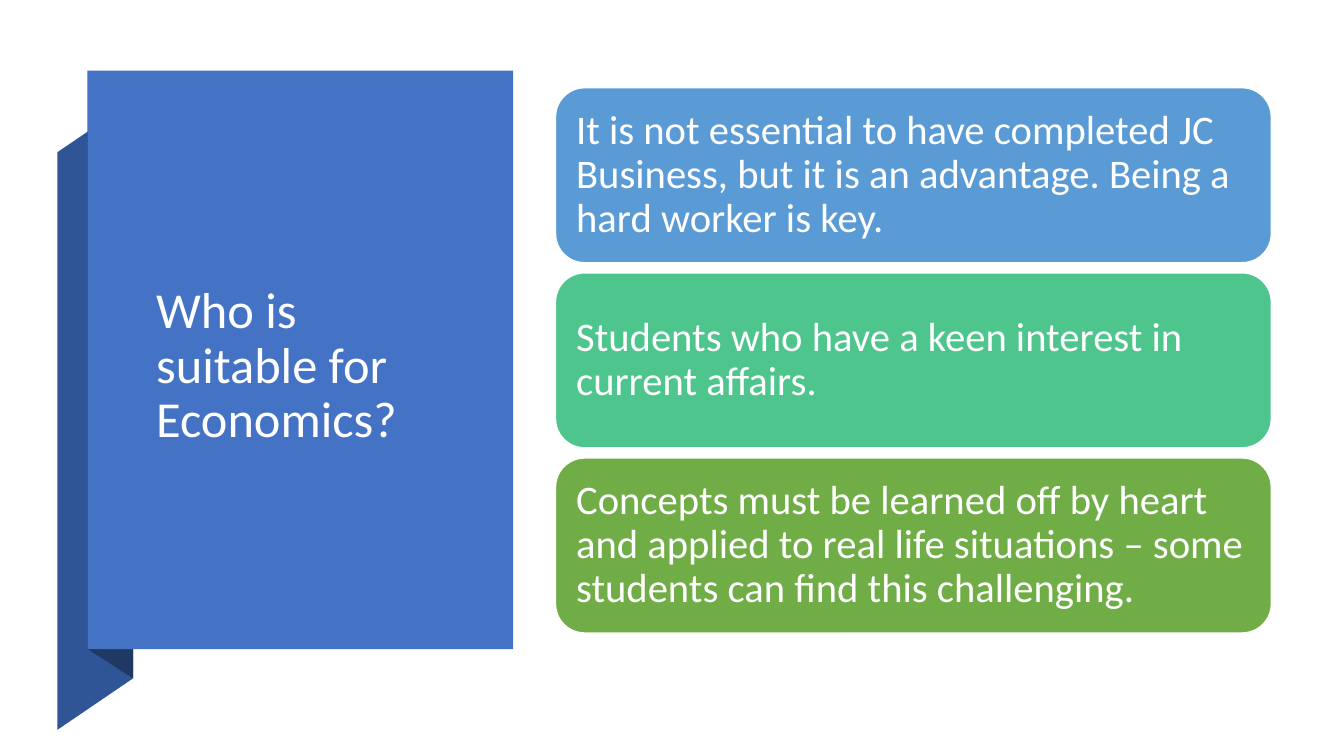
import pptx
import pptx.util
from pptx.dml.color import RGBColor
from pptx.enum.shapes import MSO_SHAPE
from pptx.enum.text import MSO_ANCHOR, PP_ALIGN

WHITE = RGBColor(0xFF, 0xFF, 0xFF)
BLUE = RGBColor(0x44, 0x72, 0xC4)
MID_BLUE = RGBColor(0x2F, 0x55, 0x97)
NAVY = RGBColor(0x20, 0x38, 0x64)
SKY = RGBColor(0x5B, 0x9B, 0xD5)
MINT = RGBColor(0x4D, 0xC5, 0x8D)
GREEN = RGBColor(0x70, 0xAD, 0x47)

TITLE = "Who is suitable for Economics?"
POINTS = [
    ("It is not essential to have completed JC Business, but it is an "
     "advantage. Being a hard worker is key.", SKY),
    ("Students who have a keen interest in current affairs.", MINT),
    ("Concepts must be learned off by heart and applied to real life "
     "situations – some students can find this challenging.", GREEN),
]
inch = pptx.util.Inches


def paint(sp, color, line=None):
    sp.shadow.inherit = False
    sp.fill.solid()
    sp.fill.fore_color.rgb = color
    if line is None:
        sp.line.fill.background()
    else:
        sp.line.color.rgb = line
        sp.line.width = pptx.util.Pt(1)


def write(sp, text, size, inset, after=0):
    tf = sp.text_frame
    frame = {"word_wrap": True, "vertical_anchor": MSO_ANCHOR.MIDDLE,
             "margin_left": inch(inset), "margin_right": inch(inset),
             "margin_top": inch(inset), "margin_bottom": inch(inset)}
    for name, value in frame.items():
        setattr(tf, name, value)
    p = tf.paragraphs[0]
    para = {"alignment": PP_ALIGN.LEFT, "line_spacing": 0.9,
            "space_after": pptx.util.Pt(after)}
    for name, value in para.items():
        setattr(p, name, value)
    r = p.add_run()
    r.text = text
    for name, value in {"name": "Calibri", "size": pptx.util.Pt(size)}.items():
        setattr(r.font, name, value)
    r.font.color.rgb = WHITE


def polygon(s, points, color):
    start, *rest = [(inch(x), inch(y)) for x, y in points]
    builder = s.shapes.build_freeform(*start)
    builder.add_line_segments(rest, close=True)
    paint(builder.convert_to_shape(), color)


def title_ribbon(s, x, y, w, h):
    # Folded ribbon behind the panel
    outer, fold = x - 0.3, x + 0.45
    bottom = y + h
    polygon(s, [(outer, bottom + 0.8), (fold, bottom + 0.29),
                (fold, y + 0.3), (outer, y + 0.81)], MID_BLUE)
    polygon(s, [(x, bottom), (fold, bottom + 0.29),
                (fold, y + 0.29), (x, y)], NAVY)
    # Front panel and title
    panel = s.shapes.add_shape(MSO_SHAPE.RECTANGLE,
                               inch(x), inch(y), inch(w), inch(h))
    paint(panel, BLUE)
    title = s.shapes.add_textbox(inch(x + 0.58), inch(y + 0.97),
                                 inch(3.01), inch(3.94))
    write(title, TITLE, 36, 0.1)


def point_cards(s, x, y, w, h, gap=0.1):
    # Equal rows, one card per point
    card_h = (h - gap * (len(POINTS) - 1)) / len(POINTS)
    for row, (text, color) in enumerate(POINTS):
        sp = s.shapes.add_shape(MSO_SHAPE.ROUNDED_RECTANGLE, inch(x),
                                inch(y + row * (card_h + gap)),
                                inch(w), inch(card_h))
        paint(sp, color, WHITE)
        write(sp, text, 29, 0.12)


def main():
    prs = pptx.Presentation()
    prs.slide_width, prs.slide_height = inch(13.33), inch(7.5)
    s = prs.slides.add_slide(prs.slide_layouts[6])
    title_ribbon(s, 0.87, 0.7, 4.22, 5.74)
    point_cards(s, 5.51, 0.87, 7.1, 5.41)
    prs.save("out.pptx")


if __name__ == "__main__":
    main()
